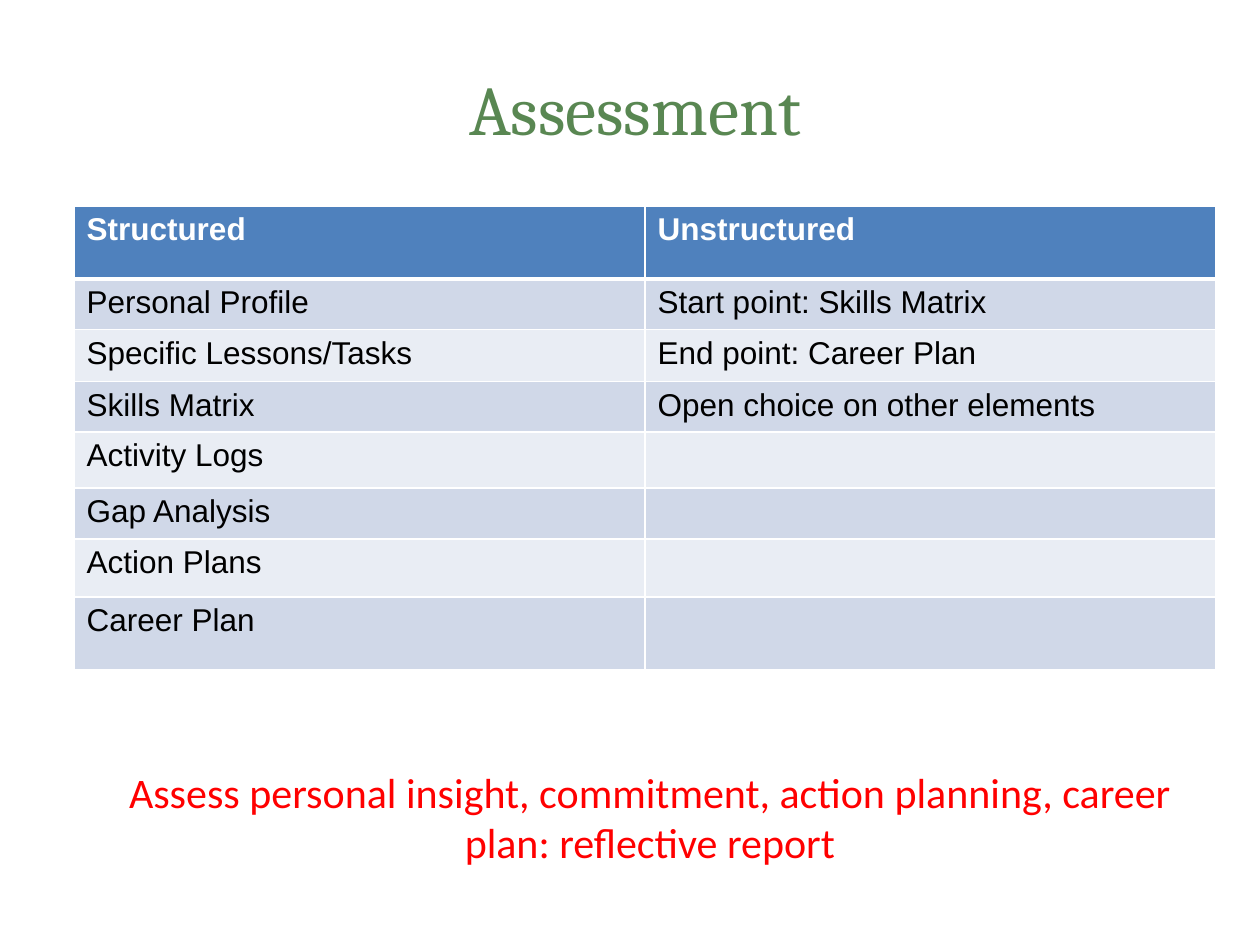
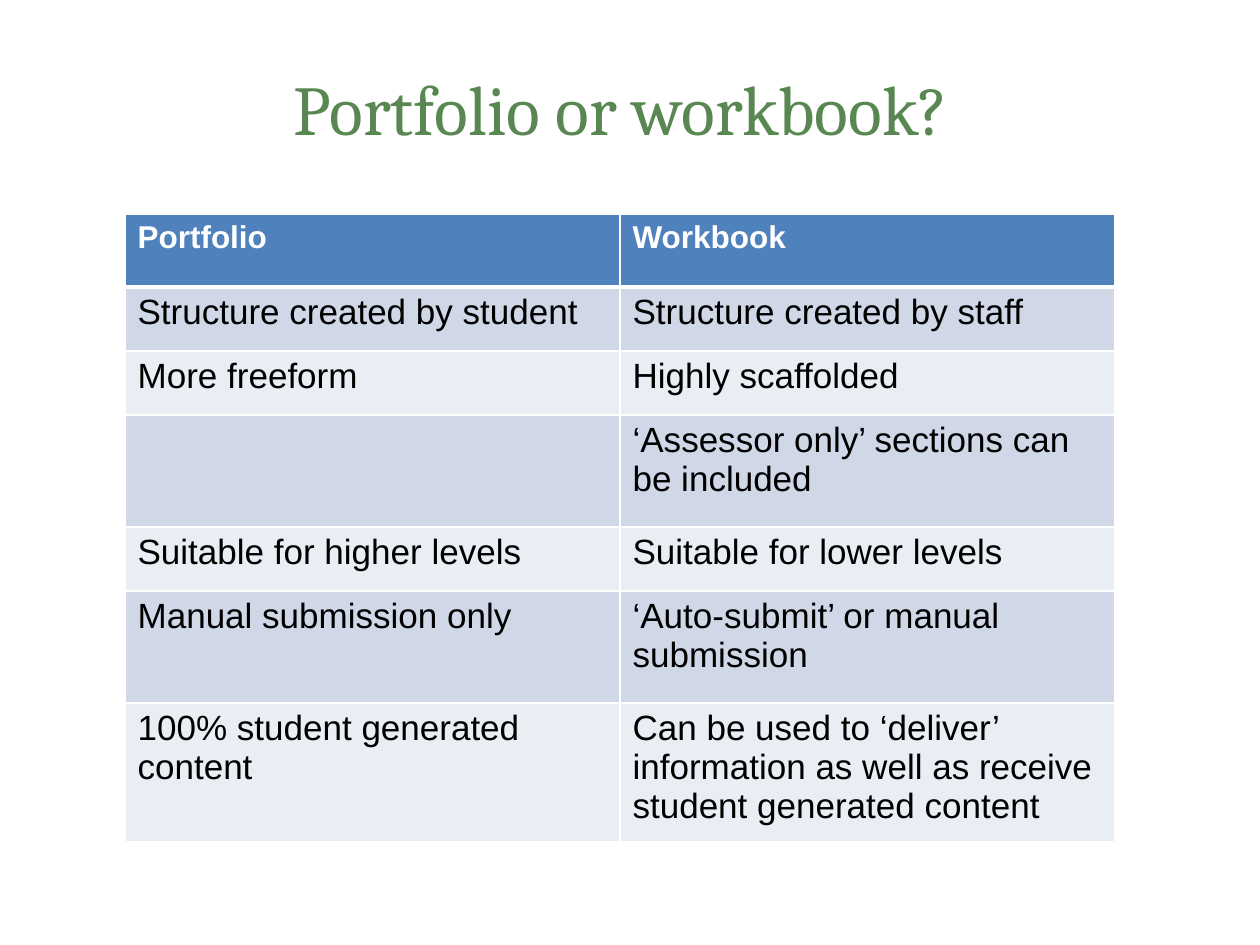
import pptx
import pptx.dml.color
import pptx.enum.text
import pptx.oxml
import pptx.oxml.ns
import pptx.util

PX = 914400 // 126  # EMU per px

WHITE = pptx.dml.color.RGBColor(0xFF, 0xFF, 0xFF)
BLACK = pptx.dml.color.RGBColor(0x00, 0x00, 0x00)
GREEN = pptx.dml.color.RGBColor(0x59, 0x87, 0x52)
RED = pptx.dml.color.RGBColor(0xFF, 0x00, 0x00)
HEADER_BLUE = pptx.dml.color.RGBColor(0x4F, 0x81, 0xBD)
BANDS = (
    pptx.dml.color.RGBColor(0xD0, 0xD8, 0xE8),
    pptx.dml.color.RGBColor(0xE9, 0xED, 0xF4),
)

ASSESSMENT_ROWS = [
    ("Structured", "Unstructured"),
    ("Personal Profile", "Start point: Skills Matrix"),
    ("Specific Lessons/Tasks", "End point: Career Plan"),
    ("Skills Matrix", "Open choice on other elements"),
    ("Activity Logs", ""),
    ("Gap Analysis", ""),
    ("Action Plans", ""),
    ("Career Plan", ""),
]
PORTFOLIO_ROWS = [
    ("Portfolio", "Workbook"),
    ("Structure created by student", "Structure created by staff"),
    ("More freeform", "Highly scaffolded"),
    ("", "‘Assessor only’ sections can be included"),
    ("Suitable for higher levels", "Suitable for lower levels"),
    ("Manual submission only", "‘Auto-submit’ or manual submission"),
    ("100% student generated content",
     "Can be used to ‘deliver’ information as well as receive student generated content"),
]


def style(paragraph, name, size, color, bold=False):
    font = paragraph.font
    font.name = name
    font.size = pptx.util.Pt(size)
    font.color.rgb = color
    font.bold = bold


def add_centred_text(slide, box, text, name, size, color):
    shape = slide.shapes.add_textbox(*(length * PX for length in box))
    shape.text_frame.word_wrap = True
    paragraph = shape.text_frame.paragraphs[0]
    paragraph.text = text
    paragraph.alignment = pptx.enum.text.PP_ALIGN.CENTER
    style(paragraph, name, size, color)
    return shape.text_frame


def add_title(slide, box, text):
    frame = add_centred_text(slide, box, text, "Cambria", 40, GREEN)
    frame.margin_left = frame.margin_right = 0
    frame.margin_top = frame.margin_bottom = 0
    frame.paragraphs[0].line_spacing = pptx.util.Pt(48)


def set_borders(cell, top, bottom):
    """White cell lines, 1 pt at the sides; top and bottom in points."""
    properties = cell._tc.get_or_add_tcPr()
    sides = (("lnL", 1), ("lnR", 1), ("lnT", top), ("lnB", bottom))
    for position, (side, points) in enumerate(sides):
        line = pptx.oxml.parse_xml(
            f'<a:{side} {pptx.oxml.ns.nsdecls("a")} w="{pptx.util.Pt(points)}">'
            f'<a:solidFill><a:srgbClr val="{WHITE}"/></a:solidFill></a:{side}>')
        properties.insert(position, line)


def add_banded_table(slide, box, rows, heights, body_size):
    """Two equal columns under a blue header; box is left, top, width."""
    left, top, width = box
    table = slide.shapes.add_table(
        len(rows), 2, left * PX, top * PX, width * PX, sum(heights) * PX).table
    for column in table.columns:
        column.width = width * PX // 2
    for row_index, (texts, height) in enumerate(zip(rows, heights)):
        table.rows[row_index].height = height * PX
        is_header = row_index == 0
        for column_index, text in enumerate(texts):
            cell = table.cell(row_index, column_index)
            cell.fill.solid()
            cell.fill.fore_color.rgb = HEADER_BLUE if is_header else BANDS[(row_index - 1) % 2]
            set_borders(cell, 3 if row_index == 1 else 1, 3 if is_header else 1)
            paragraph = cell.text_frame.paragraphs[0]
            paragraph.text = text
            if is_header:
                style(paragraph, "Arial", 18, WHITE, bold=True)
            else:
                style(paragraph, "Arial", body_size, BLACK)


def build_assessment(slide):
    add_title(slide, (74, 66, 1122, 110), "Assessment")
    add_banded_table(slide, (74, 206, 1142), ASSESSMENT_ROWS,
                     (73, 47, 52, 49, 56, 51, 58, 73), 18)
    # Closing remark
    add_centred_text(
        slide, (84, 760, 1132, 115),
        "Assess personal insight, commitment, action planning, career plan: reflective report",
        "Calibri", 24, RED)


def build_portfolio(slide):
    add_title(slide, (125, 66, 992, 188), "Portfolio or workbook?")
    add_banded_table(slide, (125, 214, 990), PORTFOLIO_ROWS,
                     (73, 64, 64, 112, 64, 112, 129), 20)


def main():
    presentation = pptx.Presentation()
    presentation.slide_width = pptx.util.Inches(10)
    presentation.slide_height = pptx.util.Inches(7.5)
    blank = presentation.slide_layouts[6]
    for build in (build_assessment, build_portfolio):
        build(presentation.slides.add_slide(blank))
    presentation.save("out.pptx")


if __name__ == "__main__":
    main()
